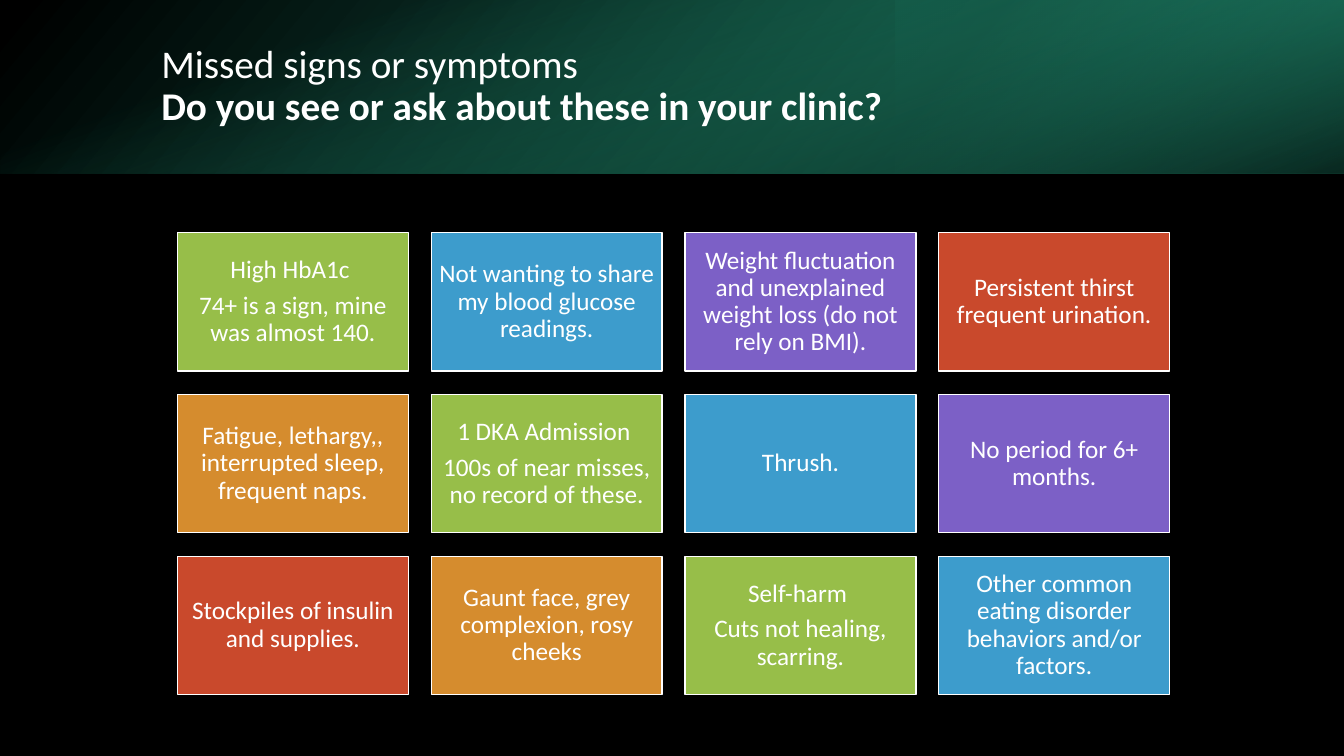
from dataclasses import dataclass

from lxml.etree import SubElement
from pptx import Presentation
from pptx.dml.color import RGBColor
from pptx.enum.shapes import MSO_SHAPE as Shape
from pptx.enum.text import MSO_ANCHOR as Anchor, PP_ALIGN as Align
from pptx.oxml.ns import qn
from pptx.util import Inches, Pt


@dataclass(frozen=True)
class Theme:
    """Colours, type and text spacing of the slide."""
    font: str = "Calibri"
    title_size: int = 28
    card_size: int = 18
    line_spacing: float = 0.9
    paragraph_gap: int = 6
    inset: float = 0.07
    background: str = "000000"
    text: str = "FFFFFF"
    cards: tuple = ("97BE49", "3D9CCC", "7C60C6", "C9492C", "D58C2E")


@dataclass(frozen=True)
class Grid:
    """Card grid in inches."""
    left: float = 1.76
    top: float = 2.31
    width: float = 2.29
    height: float = 1.37
    column_step: float = 2.517
    row_step: float = 1.605
    columns: int = 4

    def cell(self, index):
        """Return the left, top, width and height of one card."""
        row, column = divmod(index, self.columns)
        return (self.left + column * self.column_step,
                self.top + row * self.row_step, self.width, self.height)


THEME = Theme()
GRID = Grid()
WIDTH, HEIGHT, BANNER = 13.33, 7.5, 1.72

SYMPTOMS = [
    "High HbA1c \n74+ is a sign, mine was almost 140.",
    "Not wanting to share my blood glucose readings.",
    "Weight fluctuation and unexplained weight loss (do not rely on BMI).",
    "Persistent thirst frequent urination.",
    "Fatigue, lethargy,, interrupted sleep, frequent naps.",
    "1 DKA Admission \n100s of near misses, no record of these.",
    "Thrush.",
    "No period for 6+ months.",
    "Stockpiles of insulin and supplies.",
    "Gaunt face, grey complexion, rosy cheeks",
    "Self-harm \nCuts not healing, scarring.",
    "Other common eating disorder behaviors and/or factors.",
]


def rgb(code):
    """Turn a hex code into a colour."""
    return RGBColor.from_string(code)


def add_rectangle(slide, box):
    """Add a rectangle without a shadow at a box in inches."""
    rectangle = slide.shapes.add_shape(Shape.RECTANGLE, *map(Inches, box))
    rectangle.shadow.inherit = False
    return rectangle


def add_banner_layer(slide, box, stops, angle, rotation=0, flipped=False):
    """Add a borderless layer with a two-stop translucent gradient."""
    layer = add_rectangle(slide, box)
    layer.rotation = rotation
    if flipped:
        layer._element.spPr.xfrm.set("flipH", "1")
    layer.line.fill.background()
    layer.fill.gradient()
    layer.fill.gradient_angle = 360 - angle
    for stop, (position, colour, _) in zip(layer.fill.gradient_stops, stops):
        stop.position = position / 100
        stop.color.rgb = rgb(colour)
    colours = list(layer._element.spPr.iter(qn("a:srgbClr")))
    for colour, (_, _, opacity) in zip(colours, stops):
        SubElement(colour, qn("a:alpha")).set("val", str(opacity * 1000))


def add_banner(slide):
    """Stack the three gradient layers of the banner."""
    add_banner_layer(slide, (0, 0, WIDTH, BANNER),
                     [(0, "000000", 96), (100, "1F8369", 100)], 140, flipped=True)
    add_banner_layer(slide, (WIDTH * 2 / 3, 0, WIDTH / 3, BANNER),
                     [(19, "155746", 68), (100, "29AF8C", 79)], 320, 180, True)
    add_banner_layer(slide, ((WIDTH - BANNER) / 2, (BANNER - WIDTH) / 2, BANNER, WIDTH),
                     [(23, "29AF8C", 0), (99, "000000", 74)], 340, 90)


def format_text(frame, size, alignment):
    """Apply the shared type style to a text frame."""
    frame.word_wrap = True
    frame.vertical_anchor = Anchor.MIDDLE
    for paragraph in frame.paragraphs:
        paragraph.alignment = alignment
        paragraph.line_spacing = THEME.line_spacing
        for run in paragraph.runs:
            run.font.name = THEME.font
            run.font.size = Pt(size)
            run.font.color.rgb = rgb(THEME.text)


def set_title(slide, lead, question):
    """Place the title above the banner, with its question in bold."""
    title = slide.shapes.title
    title.left, title.top, title.width, title.height = map(
        Inches, (1.5, 0.38, 10.98, 0.96))
    title.text_frame.text = f"{lead}\v{question}"
    format_text(title.text_frame, THEME.title_size, Align.LEFT)
    title.text_frame.paragraphs[0].runs[-1].font.bold = True
    slide.shapes._spTree.append(title._element)


def add_card(slide, box, symptom, colour):
    """Add one coloured symptom card."""
    card = add_rectangle(slide, box)
    card.fill.solid()
    card.fill.fore_color.rgb = rgb(colour)
    card.line.color.rgb = rgb(THEME.text)
    card.line.width = Pt(1)
    frame = card.text_frame
    frame.text = symptom
    frame.margin_left = frame.margin_right = Inches(THEME.inset)
    frame.margin_top = frame.margin_bottom = Inches(THEME.inset)
    format_text(frame, THEME.card_size, Align.CENTER)
    for paragraph in frame.paragraphs:
        paragraph.space_after = Pt(THEME.paragraph_gap)


def main():
    """Build and save the slide."""
    deck = Presentation()
    deck.slide_width, deck.slide_height = Inches(WIDTH), Inches(HEIGHT)
    slide = deck.slides.add_slide(deck.slide_layouts[5])
    slide.background.fill.solid()
    slide.background.fill.fore_color.rgb = rgb(THEME.background)
    add_banner(slide)
    set_title(slide, "Missed signs or symptoms",
              "Do you see or ask about these in your clinic?")
    for index, symptom in enumerate(SYMPTOMS):
        colour = THEME.cards[index % len(THEME.cards)]
        add_card(slide, GRID.cell(index), symptom, colour)
    deck.save("out.pptx")


if __name__ == "__main__":
    main()
